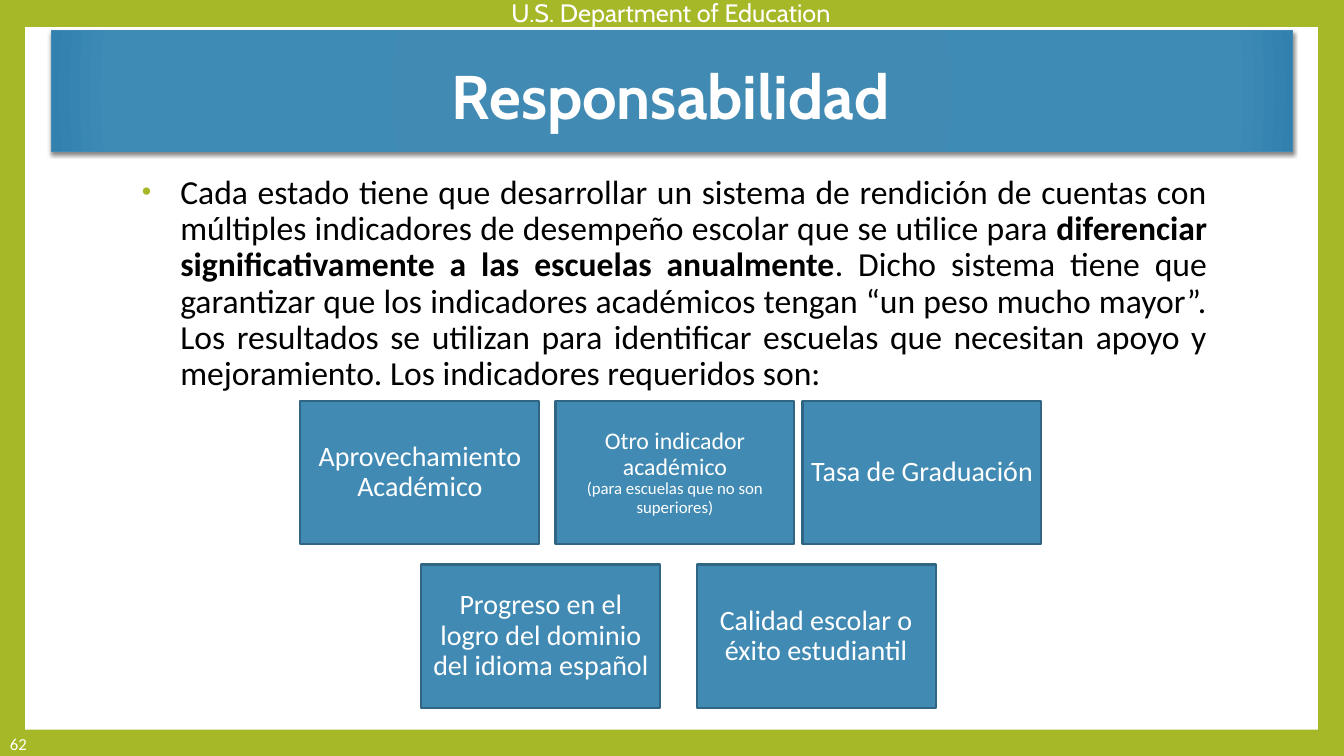
from dataclasses import dataclass

from lxml.etree import SubElement
from pptx import Presentation
from pptx.dml.color import RGBColor
from pptx.enum.shapes import MSO_SHAPE
from pptx.enum.text import MSO_ANCHOR, PP_ALIGN
from pptx.oxml import parse_xml
from pptx.oxml.ns import nsdecls, qn
from pptx.shapes.autoshape import Shape
from pptx.slide import Slide
from pptx.text.text import _Paragraph as Paragraph
from pptx.util import Inches, Pt


@dataclass(frozen=True)
class Theme:
    """Colours, fonts and type sizes of the slide."""

    green: str = "A6B727"
    blue: str = "418AB3"
    blue_mid: str = "3E8BB6"
    blue_deep: str = "3180AD"
    blue_edge: str = "306684"
    white: str = "FFFFFF"
    black: str = "000000"
    heading_font: str = "Cabin"
    body_font: str = "Calibri"
    title_size: int = 44
    body_size: int = 24
    indicator_size: int = 20
    header_size: int = 18
    long_indicator_size: int = 17
    small_size: int = 12


@dataclass(frozen=True)
class Frame:
    """A rectangle on the page, in inches."""

    left: float
    top: float
    width: float
    height: float

    def lengths(self) -> tuple[Inches, Inches, Inches, Inches]:
        """Return the four measures as lengths."""
        return Inches(self.left), Inches(self.top), Inches(self.width), Inches(self.height)


@dataclass(frozen=True)
class Indicator:
    """One required indicator, with an optional remark below it."""

    left: float
    top: float
    label: str
    size: int
    remark: str = ""


THEME = Theme()
INDICATOR_WIDTH, INDICATOR_HEIGHT = 2.37, 1.42
UPPER_ROW, LOWER_ROW = 3.98, 5.6
INDICATORS = [
    Indicator(2.98, UPPER_ROW, "Aprovechamiento Académico", THEME.indicator_size),
    Indicator(5.51, UPPER_ROW, "Otro indicador académico", THEME.long_indicator_size,
              "(para escuelas que no son superiores)"),
    Indicator(7.96, UPPER_ROW, "Tasa de Graduación", THEME.indicator_size),
    Indicator(4.18, LOWER_ROW, "Progreso en el logro del dominio del idioma español",
              THEME.indicator_size),
    Indicator(6.91, LOWER_ROW, "Calidad escolar o éxito estudiantil", THEME.indicator_size),
]
BODY_SPANS = [
    ("Cada estado tiene que desarrollar un sistema de rendición de cuentas con múltiples "
     "indicadores de desempeño escolar que se utilice para ", False),
    ("diferenciar significativamente a las escuelas anualmente", True),
    (". Dicho sistema tiene que garantizar que los indicadores académicos tengan “un peso "
     "mucho mayor”. Los resultados se utilizan para identificar escuelas que necesitan apoyo "
     "y mejoramiento. Los indicadores requeridos son:", False),
]


def color(value: str) -> RGBColor:
    """Turn a hex value into a colour."""
    return RGBColor.from_string(value)


def style(para: Paragraph, font: str, size: int, ink: str) -> None:
    """Set the font of a paragraph."""
    para.font.name = font
    para.font.size = Pt(size)
    para.font.color.rgb = color(ink)


def add_rectangle(page: Slide, frame: Frame, fill: str) -> Shape:
    """Draw a plain filled rectangle without an outline."""
    box = page.shapes.add_shape(MSO_SHAPE.RECTANGLE, *frame.lengths())
    box.shadow.inherit = False
    box.fill.solid()
    box.fill.fore_color.rgb = color(fill)
    box.line.fill.background()
    return box


def outline(box: Shape, ink: str, width: float) -> None:
    """Give a shape an outline."""
    box.line.color.rgb = color(ink)
    box.line.width = Pt(width)


def add_text(page: Slide, frame: Frame, align: PP_ALIGN) -> Paragraph:
    """Add a wrapping text box and return its empty paragraph."""
    box = page.shapes.add_textbox(*frame.lengths())
    box.text_frame.word_wrap = True
    para = box.text_frame.paragraphs[0]
    para.alignment = align
    return para


def add_banner(page: Slide) -> None:
    """Draw the title band with its radial gradient and shadow."""
    box = add_rectangle(page, Frame(0.51, 0.3, 12.31, 1.2), THEME.blue)
    outline(box, THEME.blue, 0.79)
    properties = box.fill._xPr
    stops = "".join(
        f'<a:gs pos="{place * 1000}"><a:srgbClr val="{value}"/></a:gs>'
        for place, value in ((0, THEME.blue), (90, THEME.blue_mid), (100, THEME.blue_deep))
    )
    gradient = parse_xml(
        f'<a:gradFill {nsdecls("a")} rotWithShape="1"><a:gsLst>{stops}</a:gsLst>'
        '<a:path path="circle"><a:fillToRect l="100000" t="100000" r="100000" b="100000"/>'
        "</a:path></a:gradFill>"
    )
    properties.replace(properties.find(qn("a:solidFill")), gradient)
    shadow = SubElement(properties.find(qn("a:effectLst")), qn("a:outerShdw"),
                        blurRad=str(Pt(3)), dist=str(Pt(2)), dir="5400000", rotWithShape="0")
    ink = SubElement(shadow, qn("a:srgbClr"), val=THEME.black)
    SubElement(ink, qn("a:alpha"), val="45000")


def add_body(page: Slide) -> None:
    """Write the bulleted paragraph."""
    para = add_text(page, Frame(1.27, 1.69, 10.8, 2.3), PP_ALIGN.JUSTIFY)
    para.line_spacing = 0.9
    properties = para._p.get_or_add_pPr()
    properties.set("marL", str(Inches(0.42)))
    properties.set("indent", str(Inches(-0.38)))
    SubElement(SubElement(properties, qn("a:buClr")), qn("a:srgbClr"), val=THEME.green)
    SubElement(properties, qn("a:buSzPct"), val="80000")
    SubElement(properties, qn("a:buFont"), typeface="Arial")
    SubElement(properties, qn("a:buChar"), char="•")
    style(para, THEME.body_font, THEME.body_size, THEME.black)
    for text, bold in BODY_SPANS:
        span = para.add_run()
        span.text = text
        span.font.bold = bold


def add_indicator(page: Slide, indicator: Indicator) -> None:
    """Draw one indicator box with its label."""
    frame = Frame(indicator.left, indicator.top, INDICATOR_WIDTH, INDICATOR_HEIGHT)
    box = add_rectangle(page, frame, THEME.blue)
    outline(box, THEME.blue_edge, 1.5)
    text = box.text_frame
    text.word_wrap = True
    text.vertical_anchor = MSO_ANCHOR.MIDDLE
    text.margin_left = text.margin_right = text.margin_top = text.margin_bottom = Inches(0.08)
    para = text.paragraphs[0]
    para.alignment = PP_ALIGN.CENTER
    para.line_spacing = 0.9
    style(para, THEME.body_font, indicator.size, THEME.white)
    para.add_run().text = indicator.label
    if indicator.remark:
        para.add_line_break()
        span = para.add_run()
        span.text = indicator.remark
        span.font.size = Pt(THEME.small_size)


def main() -> None:
    """Build the slide and save it."""
    deck = Presentation()
    deck.slide_width, deck.slide_height = Inches(13.33), Inches(7.5)
    page = deck.slides.add_slide(deck.slide_layouts[6])
    page.background.fill.solid()
    page.background.fill.fore_color.rgb = color(THEME.green)
    add_rectangle(page, Frame(0.25, 0.27, 12.82, 6.97), THEME.white)

    header = add_text(page, Frame(3.32, -0.08, 6.67, 0.4), PP_ALIGN.CENTER)
    style(header, THEME.heading_font, THEME.header_size, THEME.white)
    header.add_run().text = "U.S. Department of Education"

    add_banner(page)
    add_body(page)
    title = add_text(page, Frame(3.14, 0.61, 7.03, 0.81), PP_ALIGN.CENTER)
    title.line_spacing = 0.9
    style(title, THEME.heading_font, THEME.title_size, THEME.white)
    title.font.bold = True
    title.add_run().text = "Responsabilidad"

    number = add_text(page, Frame(0, 7.23, 1.87, 0.3), PP_ALIGN.LEFT)
    style(number, THEME.body_font, THEME.small_size, THEME.white)
    number.add_run().text = "62"

    for indicator in INDICATORS:
        add_indicator(page, indicator)
    deck.save("out.pptx")


if __name__ == "__main__":
    main()
